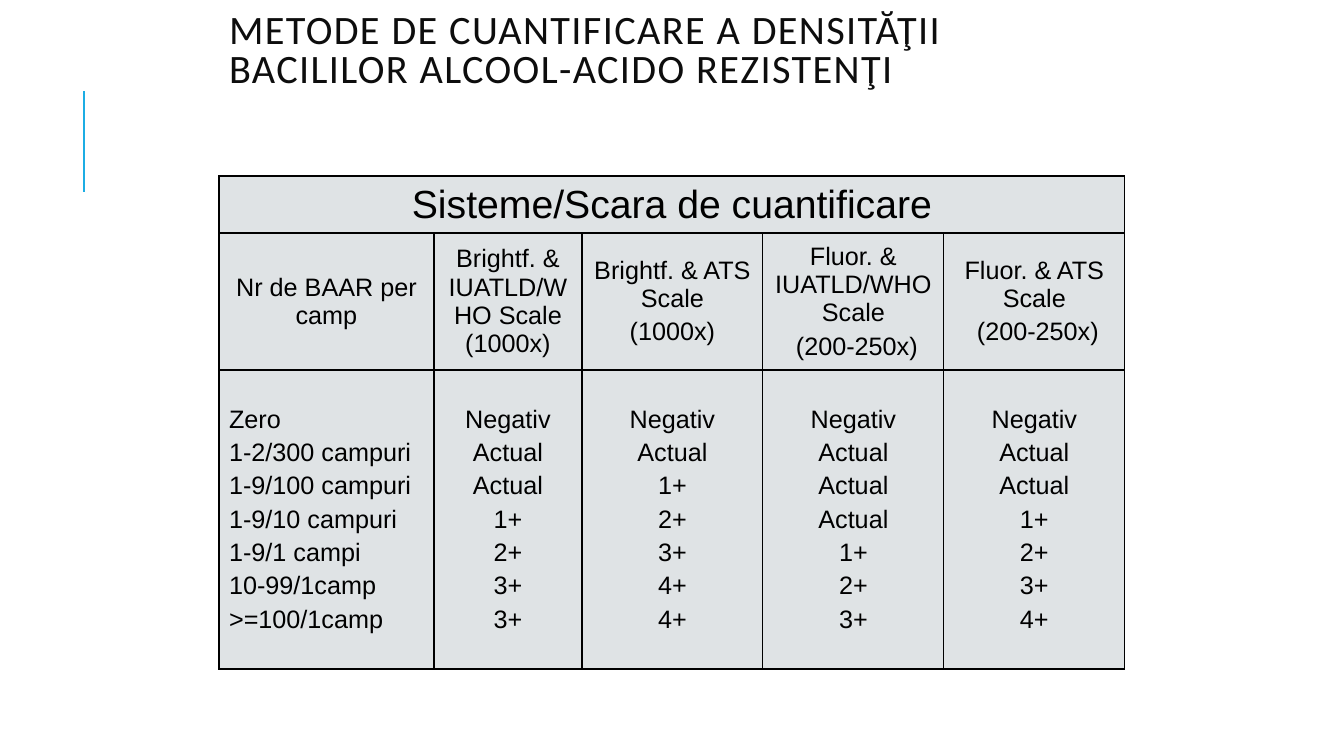
import pptx
import pptx.util
import pptx.dml.color
import pptx.enum.shapes
import pptx.enum.text
import pptx.oxml
import lxml.etree
from dataclasses import dataclass

ALIGN = pptx.enum.text.PP_ALIGN
ANCHOR = pptx.enum.text.MSO_ANCHOR
NS = "http://schemas.openxmlformats.org/drawingml/2006/main"


@dataclass(frozen=True)
class Theme:
    ink: str = "000000"
    title: str = "0D0D0D"
    accent: str = "1CADE4"
    cell: str = "DFE3E5"
    head_font: str = "Calibri"
    body_font: str = "Arial"
    head_size: float = 28.8
    band_size: float = 28
    body_size: float = 18


THEME = Theme()

HEADS = [
    "Nr de BAAR per camp",
    "Brightf. & IUATLD/WHO Scale (1000x)",
    "Brightf. & ATS Scale\n(1000x)",
    "Fluor. & IUATLD/WHO Scale\n (200-250x)",
    "Fluor. & ATS Scale\n (200-250x)",
]
GRADES = [
    "Zero|1-2/300 campuri|1-9/100 campuri|1-9/10 campuri|1-9/1 campi|10-99/1camp|>=100/1camp",
    "Negativ|Actual|Actual|1+|2+|3+|3+",
    "Negativ|Actual|1+|2+|3+|4+|4+",
    "Negativ|Actual|Actual|Actual|1+|2+|3+",
    "Negativ|Actual|Actual|1+|2+|3+|4+",
]


def px(n):
    return pptx.util.Emu(round(n * 914400 / 100.8))


def rgb(code):
    return pptx.dml.color.RGBColor.from_string(code)


def write(frame, text, size=THEME.body_size, font=THEME.body_font,
          color=THEME.ink, align=ALIGN.CENTER, before=0.2, lead=None, track=0):
    """Fill a text frame, one paragraph per line of text."""
    for i, line in enumerate(text.split("\n")):
        para = frame.add_paragraph() if i else frame.paragraphs[0]
        para.alignment = align
        para.space_before = pptx.util.Pt(round(size * before, 1))
        if lead:
            para.line_spacing = lead
        run = para.add_run()
        run.text = line
        run.font.name = font
        run.font.size = pptx.util.Pt(size)
        run.font.color.rgb = rgb(color)
        if track:
            run.font._element.set("spc", str(track))


def border(cell):
    """Draw a thin line on all four sides of a cell."""
    props = cell._tc.get_or_add_tcPr()
    for i, side in enumerate("LRTB"):
        props.insert(i, pptx.oxml.parse_xml(
            f'<a:ln{side} xmlns:a="{NS}" w="12700"><a:solidFill>'
            f'<a:srgbClr val="{THEME.ink}"/></a:solidFill></a:ln{side}>'))


def heading(slide, x, y, w, h):
    box = slide.shapes.title
    box.left, box.top, box.width, box.height = map(px, (x, y, w, h))
    frame = box.text_frame
    frame.word_wrap = True
    frame.auto_size = pptx.enum.text.MSO_AUTO_SIZE.NONE
    frame.vertical_anchor = ANCHOR.TOP
    frame.margin_top = frame.margin_bottom = 0
    write(frame, "METODE DE CUANTIFICARE A DENSITĂŢII BACILILOR ALCOOL-ACIDO REZISTENŢI",
          size=THEME.head_size, font=THEME.head_font, color=THEME.title,
          align=ALIGN.LEFT, before=0, lead=0.8, track=100)


def accent(slide, x, y, h):
    line = slide.shapes.add_connector(
        pptx.enum.shapes.MSO_CONNECTOR.STRAIGHT, px(x), px(y + h), px(x), px(y))
    line.line.color.rgb = rgb(THEME.accent)
    line.line.width = pptx.util.Pt(1.5)
    lxml.etree.SubElement(line._element.spPr, f"{{{NS}}}effectLst")


def scale(slide, x, y, cols, rows):
    """Table of grading scales: a band, column heads, then the grades."""
    grid = slide.shapes.add_table(
        len(rows), len(cols), px(x), px(y), px(sum(cols)), px(sum(rows))).table
    grid.first_row = grid.horz_banding = False
    for col, w in zip(grid.columns, cols):
        col.width = px(w)
    for row, h in zip(grid.rows, rows):
        row.height = px(h)

    for cell in grid.iter_cells():
        cell.fill.solid()
        cell.fill.fore_color.rgb = rgb(THEME.cell)
        cell.vertical_anchor = ANCHOR.MIDDLE
        border(cell)

    # Band across all columns
    grid.cell(0, 0).merge(grid.cell(0, len(cols) - 1))
    write(grid.cell(0, 0).text_frame, "Sisteme/Scara de cuantificare",
          size=THEME.band_size)

    # Heads and grades
    for c, (head, grades) in enumerate(zip(HEADS, GRADES)):
        write(grid.cell(1, c).text_frame, head)
        write(grid.cell(2, c).text_frame, grades.replace("|", "\n"),
              align=ALIGN.CENTER if c else ALIGN.LEFT)


def main():
    deck = pptx.Presentation()
    deck.slide_width, deck.slide_height = px(1344), px(756)
    slide = deck.slides.add_slide(deck.slide_layouts[5])
    accent(slide, 84, 91, 101)
    scale(slide, 219, 176, [215, 148, 181, 181, 181], [57, 137, 299])
    heading(slide, 219, 14, 907, 118)
    deck.save("out.pptx")


if __name__ == "__main__":
    main()
